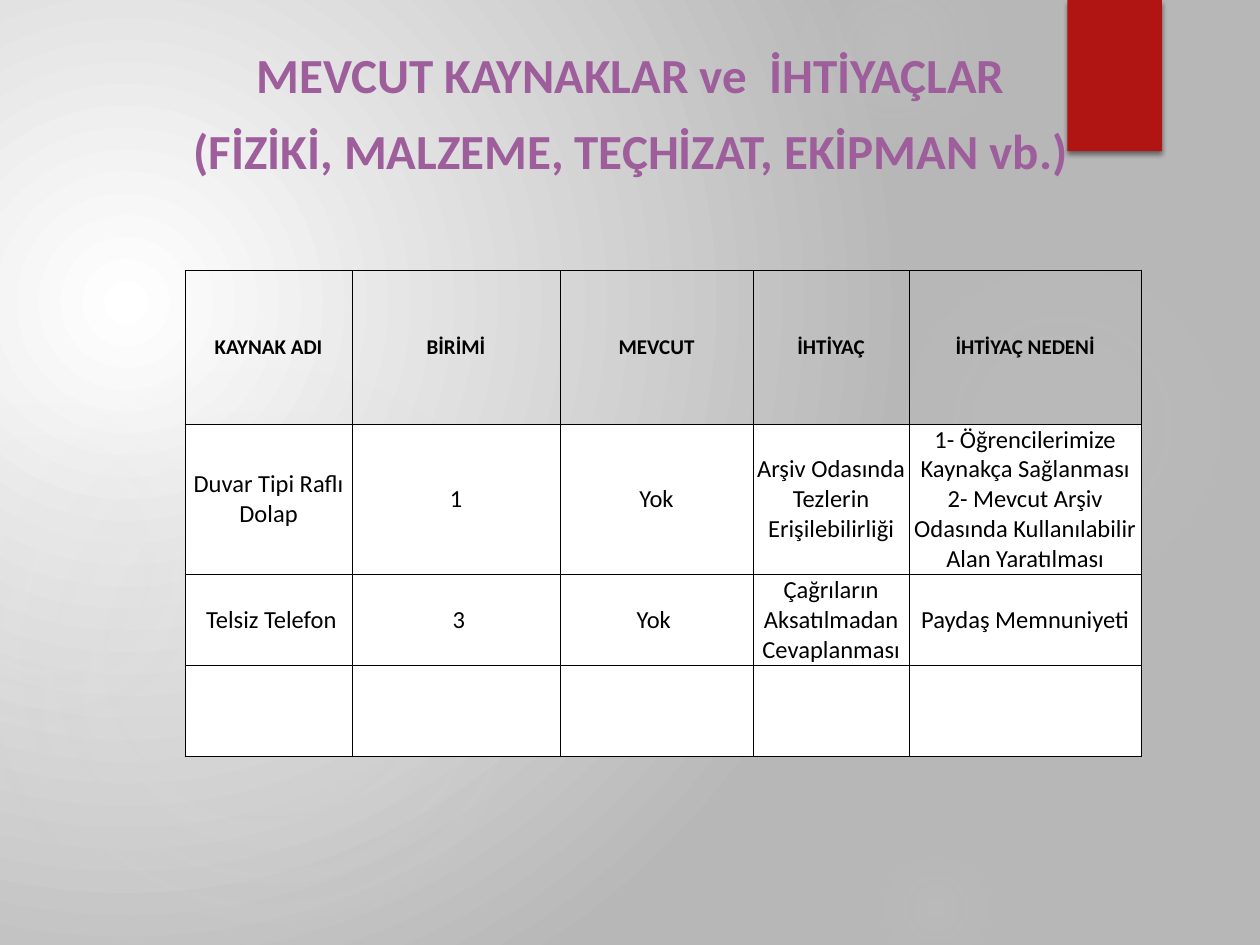
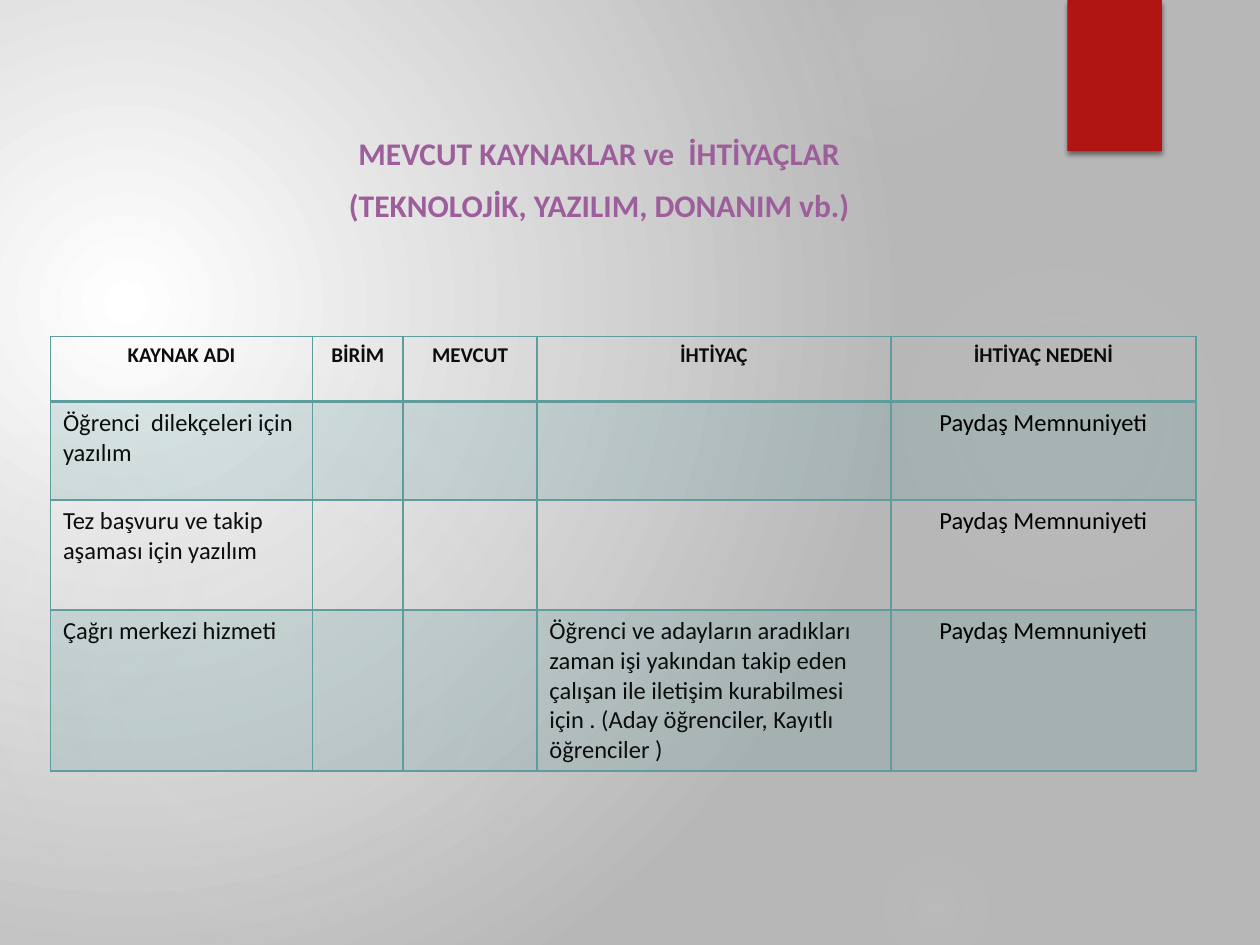
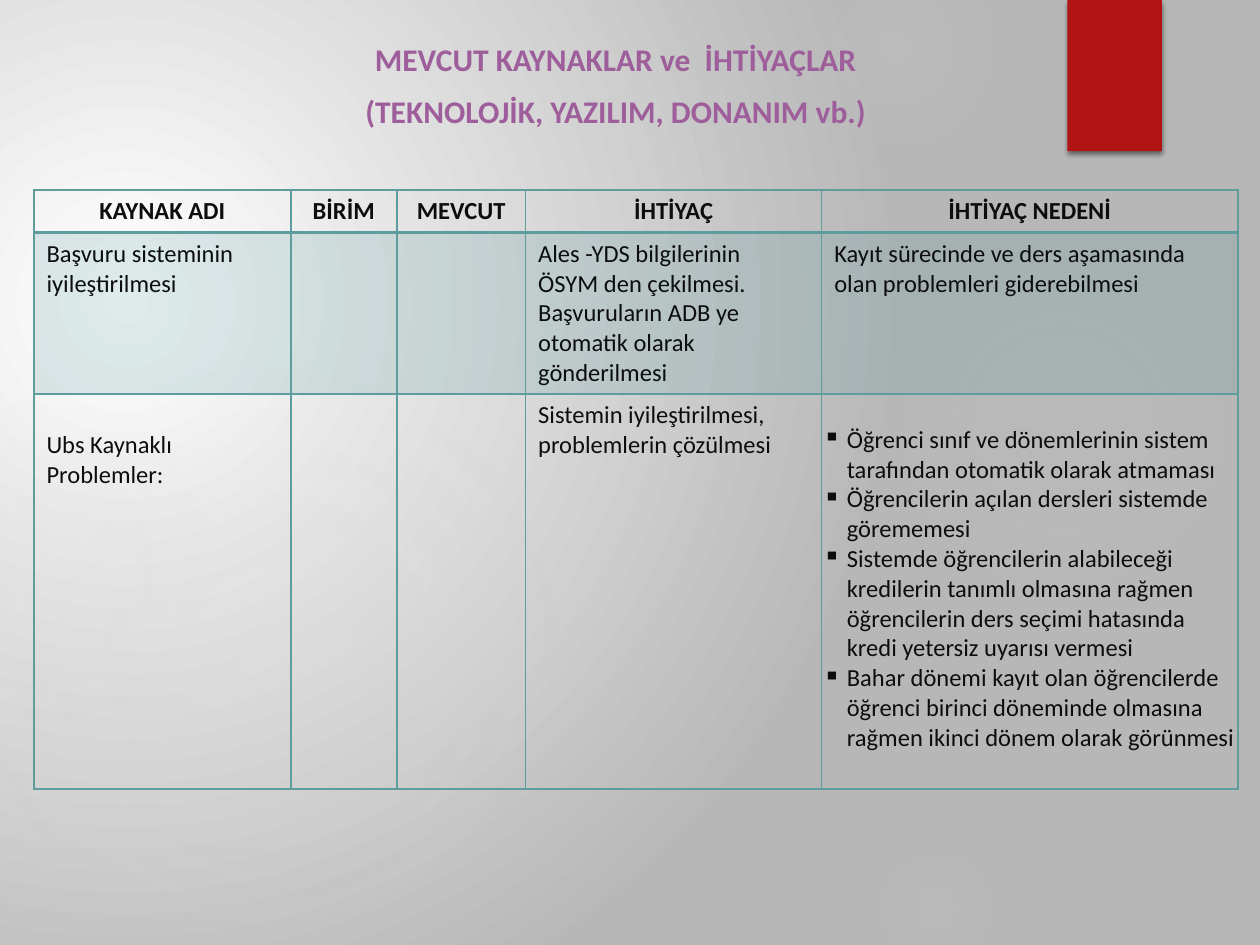
from dataclasses import dataclass
from typing import Optional

from pptx import Presentation
from pptx.dml.color import RGBColor
from pptx.enum.shapes import MSO_SHAPE as Preset
from pptx.enum.text import MSO_ANCHOR as Anchor, PP_ALIGN as Align
from pptx.oxml import parse_xml
from pptx.oxml.ns import nsdecls, qn
from pptx.util import Pt

FONT = "Calibri"
BLACK = RGBColor(0x00, 0x00, 0x00)
INK = RGBColor(0x0C, 0x0D, 0x0D)
WHITE = RGBColor(0xFF, 0xFF, 0xFF)
GREY = RGBColor(0xB7, 0xB7, 0xB7)
GLOW = RGBColor(0xD9, 0xD9, 0xD9)
RED = RGBColor(0xB0, 0x15, 0x13)
PURPLE = RGBColor(0x9E, 0x5E, 0x9B)
TEAL = RGBColor(0x5F, 0x9C, 0x9D)

CENTER, LEFT = Align.CENTER, Align.LEFT
CELL_MARGINS = (7.2, 3.6, 7.2, 3.6)
NO_MARGINS = (0, 0, 0, 0)


@dataclass(frozen=True)
class Glow:
    """A soft background circle; stops are (position, opacity) in percent."""
    left: float
    top: float
    size: float
    stops: tuple


@dataclass(frozen=True)
class Title:
    """A two-line slide heading."""
    box: tuple
    size: float
    subject: str


@dataclass(frozen=True)
class Cell:
    """One table cell."""
    text: str = ""
    align: Align = LEFT
    color: RGBColor = INK
    bold: bool = False
    size: float = 14
    anchor: Anchor = Anchor.TOP
    margins: tuple = CELL_MARGINS
    bullet: str = ""


@dataclass(frozen=True)
class Grid:
    """A table with its look."""
    left: float
    top: float
    columns: tuple
    heights: tuple
    rows: tuple
    border: RGBColor
    line: float
    header_line: float
    fill: RGBColor
    opacity: int
    filled_rows: tuple


GLOWS = (
    Glow(496, 132, 222, ((0, 7), (36, 6), (69, 0))),
    Glow(448, -36, 126, ((0, 14), (36, 7), (73, 0))),
    Glow(496, 480, 78, ((0, 9), (36, 5), (66, 0))),
    Glow(-12, 210, 330, ((0, 11), (36, 10), (75, 0))),
    Glow(-66, 228, 186, ((0, 8), (36, 8), (72, 0))),
)


def set_gradient(element, stops, focus: tuple) -> None:
    """Turn the first solid fill of an element into a circular gradient."""
    marks = "".join(
        f'<a:gs pos="{place * 1000}"><a:srgbClr val="{color}">'
        f'<a:alpha val="{opacity * 1000}"/></a:srgbClr></a:gs>'
        for place, color, opacity in stops)
    left, top, right, bottom = (part * 1000 for part in focus)
    gradient = parse_xml(
        f'<a:gradFill {nsdecls("a")} rotWithShape="1"><a:gsLst>{marks}</a:gsLst>'
        f'<a:path path="circle"><a:fillToRect l="{left}" t="{top}" r="{right}" '
        f'b="{bottom}"/></a:path></a:gradFill>')
    solid = element.find(".//" + qn("a:solidFill"))
    solid.getparent().replace(solid, gradient)


def write(frame, text: str, *, size: float, color: RGBColor, bold: bool = False,
          align: Align = LEFT, spacing: Optional[float] = None,
          after: float = 0, bullet: str = "") -> None:
    """Fill a text frame, one paragraph for each line of text."""
    for index, line in enumerate(text.split("\n")):
        para = frame.add_paragraph() if index else frame.paragraphs[0]
        para.alignment = align
        para.space_after = Pt(after)
        if spacing:
            para.line_spacing = spacing
        if bullet:
            props = para._p.get_or_add_pPr()
            props.set("marL", str(Pt(13.7)))
            props.set("indent", str(Pt(-13.7)))
            props.append(parse_xml(f'<a:buChar {nsdecls("a")} char="{bullet}"/>'))
        span = para.add_run()
        span.text = line
        span.font.name, span.font.size, span.font.bold = FONT, Pt(size), bold
        span.font.color.rgb = color


def add_plain_shape(page, preset: Preset, box: tuple, color: RGBColor):
    """Add a filled shape without line or shadow."""
    shape = page.shapes.add_shape(preset, *map(Pt, box))
    shape.shadow.inherit = False
    shape.fill.solid()
    shape.fill.fore_color.rgb = color
    shape.line.fill.background()
    return shape


def add_backdrop(page) -> None:
    """Draw the background, the glows and the red ribbon."""
    page.background.fill.solid()
    set_gradient(page.element, ((0, WHITE, 100), (100, GREY, 100)), (45, 65, 125, 100))
    for glow in GLOWS:
        circle = add_plain_shape(
            page, Preset.OVAL, (glow.left, glow.top, glow.size, glow.size), GLOW)
        stops = [(place, GLOW, opacity) for place, opacity in glow.stops]
        set_gradient(circle._element, stops, (50, 50, 50, 50))
    ribbon = add_plain_shape(page, Preset.RECTANGLE, (610, 0, 54, 86.4), RED)
    effects = ribbon._element.spPr.find(qn("a:effectLst"))
    effects.append(parse_xml(
        f'<a:outerShdw {nsdecls("a")} blurRad="{Pt(3)}" dist="{Pt(2)}" dir="5400000" '
        f'rotWithShape="0"><a:srgbClr val="{BLACK}"><a:alpha val="45000"/>'
        f'</a:srgbClr></a:outerShdw>'))


def add_title(page, title: Title) -> None:
    """Add the heading, anchored to the bottom of its box."""
    frame = page.shapes.add_textbox(*map(Pt, title.box)).text_frame
    frame.word_wrap = True
    frame.vertical_anchor = Anchor.BOTTOM
    write(frame, f"MEVCUT KAYNAKLAR ve  İHTİYAÇLAR\n({title.subject})", size=title.size,
          color=PURPLE, bold=True, align=CENTER, spacing=1.1, after=6)


def set_borders(cell, color: RGBColor, widths: dict) -> None:
    """Draw the four cell borders, given widths by side."""
    props = cell._tc.get_or_add_tcPr()
    for index, side in enumerate("LRTB"):
        props.insert(index, parse_xml(
            f'<a:ln{side} {nsdecls("a")} w="{Pt(widths[side])}"><a:solidFill>'
            f'<a:srgbClr val="{color}"/></a:solidFill></a:ln{side}>'))


def fill_cell(cell, color: RGBColor, opacity: int) -> None:
    """Fill a cell with a possibly translucent colour."""
    cell.fill.solid()
    cell.fill.fore_color.rgb = color
    if opacity < 100:
        cell._tc.tcPr.find(".//" + qn("a:srgbClr")).append(
            parse_xml(f'<a:alpha {nsdecls("a")} val="{opacity * 1000}"/>'))


def add_grid(page, grid: Grid) -> None:
    """Add a table with its texts, fills and borders."""
    box = (grid.left, grid.top, sum(grid.columns), sum(grid.heights))
    table = page.shapes.add_table(
        len(grid.heights), len(grid.columns), *map(Pt, box)).table
    table.first_row = table.horz_banding = False
    for column, width in zip(table.columns, grid.columns):
        column.width = Pt(width)
    for row, height in zip(table.rows, grid.heights):
        row.height = Pt(height)
    for r, row in enumerate(grid.rows):
        widths = dict.fromkeys("LRTB", grid.line)
        if r < 2:
            widths["T" if r else "B"] = grid.header_line
        for c, content in enumerate(row):
            cell = table.cell(r, c)
            (cell.margin_left, cell.margin_top,
             cell.margin_right, cell.margin_bottom) = map(Pt, content.margins)
            cell.vertical_anchor = content.anchor
            if content.text:
                write(cell.text_frame, content.text, size=content.size,
                      color=content.color, bold=content.bold, align=content.align,
                      bullet=content.bullet)
            if r in grid.filled_rows:
                fill_cell(cell, grid.fill, grid.opacity)
            else:
                cell.fill.background()
            set_borders(cell, grid.border, widths)


def boxed_row(*texts: str, **style) -> tuple:
    """Make a row of centred cells without margins."""
    return tuple(Cell(text, align=CENTER, color=BLACK, anchor=Anchor.MIDDLE,
                      margins=NO_MARGINS, **style) for text in texts)


def header_row(size: float) -> tuple:
    """Make the header of the technology tables."""
    names = ("KAYNAK ADI", "BİRİM", "MEVCUT", "İHTİYAÇ", "İHTİYAÇ NEDENİ")
    return tuple(Cell(name, align=CENTER, bold=True, size=size) for name in names)


def software_row(resource: str, need: str = "") -> tuple:
    """Make a row whose reason is stakeholder satisfaction."""
    reason = Cell("Paydaş Memnuniyeti", align=CENTER, color=BLACK)
    return Cell(resource), Cell(), Cell(), Cell(need), reason


EQUIPMENT = Grid(
    105.8, 154.6, (95.4, 118.8, 110.4, 89.2, 132.6), (87.8, 85.8, 52, 52),
    (
        boxed_row("KAYNAK ADI", "BİRİMİ", "MEVCUT", "İHTİYAÇ", "İHTİYAÇ NEDENİ",
                  size=12, bold=True),
        boxed_row("Duvar Tipi Raflı Dolap", "1", "Yok",
                  "Arşiv Odasında Tezlerin Erişilebilirliği",
                  "1- Öğrencilerimize Kaynakça Sağlanması\n"
                  "2- Mevcut Arşiv Odasında Kullanılabilir Alan Yaratılması"),
        boxed_row(" Telsiz Telefon", " 3", "Yok ",
                  "Çağrıların Aksatılmadan Cevaplanması", "Paydaş Memnuniyeti"),
        boxed_row(*[""] * 5),
    ),
    BLACK, 0.5, 0.5, WHITE, 100, (1, 2, 3))

SOFTWARE = Grid(
    28.8, 192.2, (149.8, 51.8, 76.4, 202.4, 174.2), (37.5, 56.2, 62.6, 92.2),
    (
        header_row(12),
        software_row("Öğrenci  dilekçeleri için yazılım"),
        software_row("Tez başvuru ve takip aşaması için yazılım"),
        software_row("Çağrı merkezi hizmeti",
                     "Öğrenci ve adayların aradıkları zaman işi yakından takip eden "
                     "çalışan ile iletişim kurabilmesi için . (Aday öğrenciler, "
                     "Kayıtlı öğrenciler )"),
    ),
    TEAL, 1, 2, TEAL, 20, (1, 3))

SYSTEMS = Grid(
    19.4, 108.6, (146.8, 60.6, 73.6, 169.2, 237.8), (24.4, 92.2, 225.6),
    (
        header_row(14),
        (Cell("Başvuru sisteminin iyileştirilmesi"), Cell(), Cell(),
         Cell("Ales -YDS bilgilerinin  ÖSYM den çekilmesi.\n"
              "Başvuruların ADB ye otomatik olarak gönderilmesi"),
         Cell("Kayıt sürecinde ve ders aşamasında olan problemleri giderebilmesi")),
        (Cell("Ubs Kaynaklı Problemler:", margins=(7.2, 20.7, 7.2, 3.6)), Cell(), Cell(),
         Cell("Sistemin iyileştirilmesi, problemlerin çözülmesi"),
         Cell("Öğrenci sınıf ve dönemlerinin sistem tarafından otomatik olarak atmaması\n"
              "Öğrencilerin açılan dersleri sistemde görememesi\n"
              "Sistemde öğrencilerin alabileceği kredilerin tanımlı olmasına rağmen "
              "öğrencilerin ders seçimi hatasında kredi yetersiz uyarısı vermesi\n"
              "Bahar dönemi kayıt olan öğrencilerde öğrenci birinci döneminde olmasına "
              "rağmen ikinci dönem olarak görünmesi",
              anchor=Anchor.BOTTOM, margins=(0.7, 0.7, 0.7, 20.5), bullet="▪")),
    ),
    TEAL, 1, 2, TEAL, 20, (1,))

TECHNOLOGY = "TEKNOLOJİK, YAZILIM, DONANIM vb."
PAGES = (
    (Title((37.4, 59.8, 645.8, 46), 28, "FİZİKİ, MALZEME, TEÇHİZAT, EKİPMAN vb."),
     EQUIPMENT),
    (Title((110.2, 71.2, 464.4, 60.4), 18, TECHNOLOGY), SOFTWARE),
    (Title((119.6, 17.2, 464.4, 60.4), 18, TECHNOLOGY), SYSTEMS),
)


def main() -> None:
    """Build and save the deck."""
    deck = Presentation()
    deck.slide_width, deck.slide_height = Pt(720), Pt(540)
    for title, grid in PAGES:
        page = deck.slides.add_slide(deck.slide_layouts[6])
        add_backdrop(page)
        add_title(page, title)
        add_grid(page, grid)
    deck.save("out.pptx")


if __name__ == "__main__":
    main()
